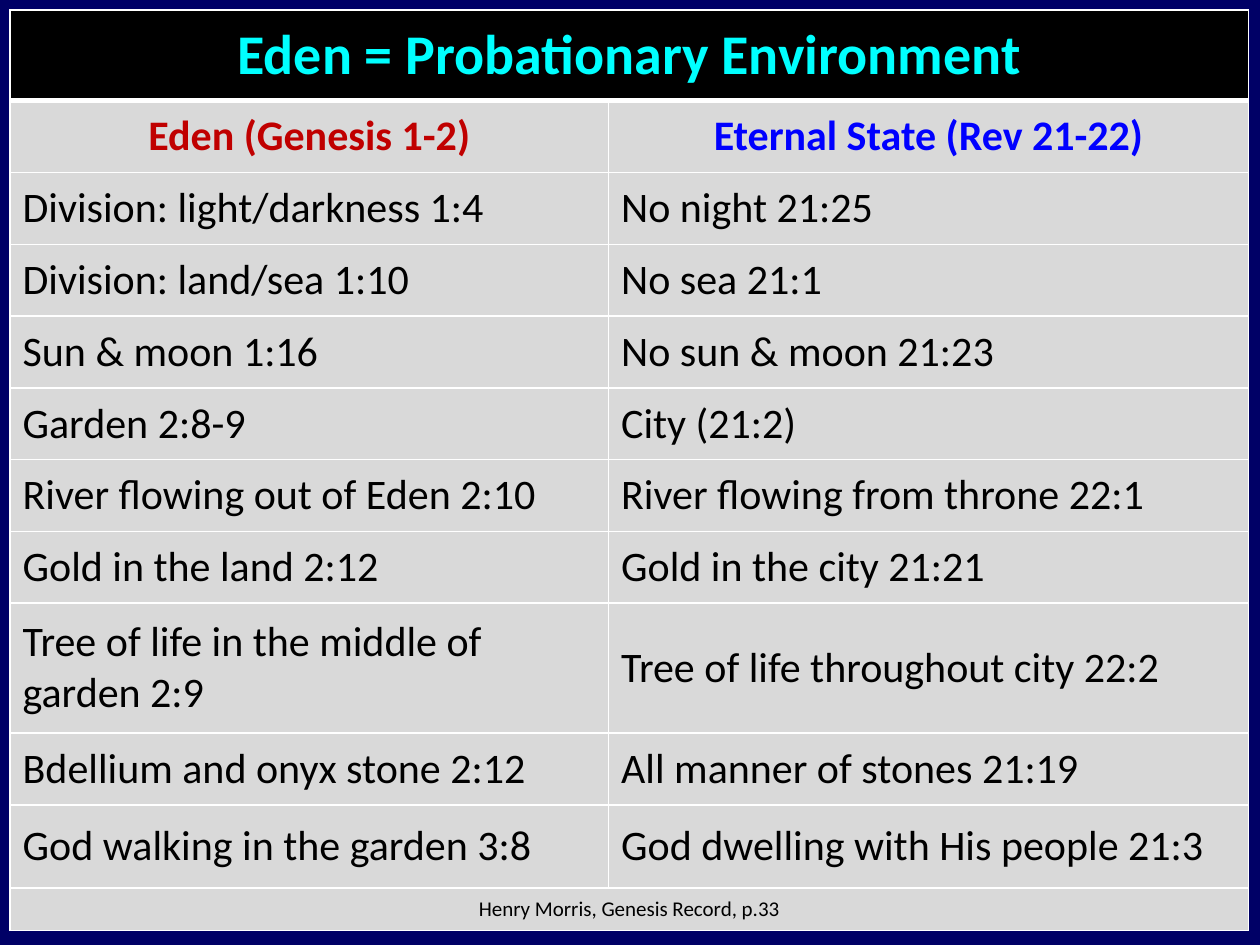
from lxml.etree import SubElement
from pptx import Presentation
from pptx.dml.color import RGBColor
from pptx.enum.text import MSO_ANCHOR, PP_ALIGN
from pptx.oxml.ns import qn
from pptx.util import Inches, Pt

COLORS = {
    "background": "000066",
    "title_fill": "000000",
    "title": "00FFFF",
    "body_fill": "D9D9D9",
    "eden": "C00000",
    "eternal": "0000FF",
    "text": "000000",
    "border": "FFFFFF",
}
TITLE = "Eden = Probationary Environment"
HEADINGS = [("Eden (Genesis 1-2)", "eden"), ("Eternal State (Rev 21-22)", "eternal")]
COMPARISONS = [
    ("Division: light/darkness 1:4", "No night 21:25"),
    ("Division: land/sea 1:10", "No sea 21:1"),
    ("Sun & moon 1:16", "No sun & moon 21:23"),
    ("Garden 2:8-9", "City (21:2)"),
    ("River flowing out of Eden 2:10", "River flowing from throne 22:1"),
    ("Gold in the land 2:12", "Gold in the city 21:21"),
    ("Tree of life in the middle of garden 2:9", "Tree of life throughout city 22:2"),
    ("Bdellium and onyx stone 2:12", "All manner of stones 21:19"),
    ("God walking in the garden 3:8", "God dwelling with His people 21:3"),
]
SOURCE = "Henry Morris, Genesis Record, p.33"
COLUMN_WIDTHS = [4.75, 5.08]
ROW_HEIGHTS = [0.72] + [0.57] * 7 + [1.03, 0.57, 0.66, 0.34]
MARGIN = 0.08


def color(name):
    return RGBColor.from_string(COLORS[name])


def add_borders(cell, top, bottom):
    properties = cell._tc.get_or_add_tcPr()
    for side, width in (("L", 1), ("R", 1), ("T", top), ("B", bottom)):
        line = SubElement(properties, qn(f"a:ln{side}"), w=str(Pt(width)))
        fill = SubElement(line, qn("a:solidFill"))
        SubElement(fill, qn("a:srgbClr"), val=COLORS["border"])


def write(cell, text, size=24, ink="text", bold=False, centered=False, spacing=3):
    cell.vertical_anchor = MSO_ANCHOR.MIDDLE
    para = cell.text_frame.paragraphs[0]
    para.text = text
    para.alignment = PP_ALIGN.CENTER if centered else PP_ALIGN.LEFT
    para.space_before = para.space_after = Pt(spacing)
    font = para.runs[0].font
    font.name = "Calibri"
    font.size = Pt(size)
    font.bold = bold
    font.color.rgb = color(ink)


def main():
    deck = Presentation()
    deck.slide_width, deck.slide_height = Inches(10), Inches(7.5)
    slide = deck.slides.add_slide(deck.slide_layouts[6])
    slide.background.fill.solid()
    slide.background.fill.fore_color.rgb = color("background")

    table = slide.shapes.add_table(
        len(ROW_HEIGHTS), len(COLUMN_WIDTHS), Inches(MARGIN), Inches(MARGIN),
        Inches(sum(COLUMN_WIDTHS)), Inches(sum(ROW_HEIGHTS)),
    ).table
    for column, width in zip(table.columns, COLUMN_WIDTHS):
        column.width = Inches(width)
    for index, (row, height) in enumerate(zip(table.rows, ROW_HEIGHTS)):
        row.height = Inches(height)
        for cell in row.cells:
            add_borders(cell, 3 if index == 1 else 1, 3 if index == 0 else 1)
            cell.fill.solid()
            cell.fill.fore_color.rgb = color("body_fill" if index else "title_fill")

    last = len(ROW_HEIGHTS) - 1
    for index in (0, last):
        table.cell(index, 0).merge(table.cell(index, 1))
    write(table.cell(0, 0), TITLE, 32, "title", bold=True, centered=True)
    for index, (heading, ink) in enumerate(HEADINGS):
        write(table.cell(1, index), heading, ink=ink, bold=True, centered=True)
    for row_index, pair in enumerate(COMPARISONS, 2):
        for column_index, text in enumerate(pair):
            write(table.cell(row_index, column_index), text)
    write(table.cell(last, 0), SOURCE, 12, centered=True, spacing=0)

    deck.save("out.pptx")


if __name__ == "__main__":
    main()
